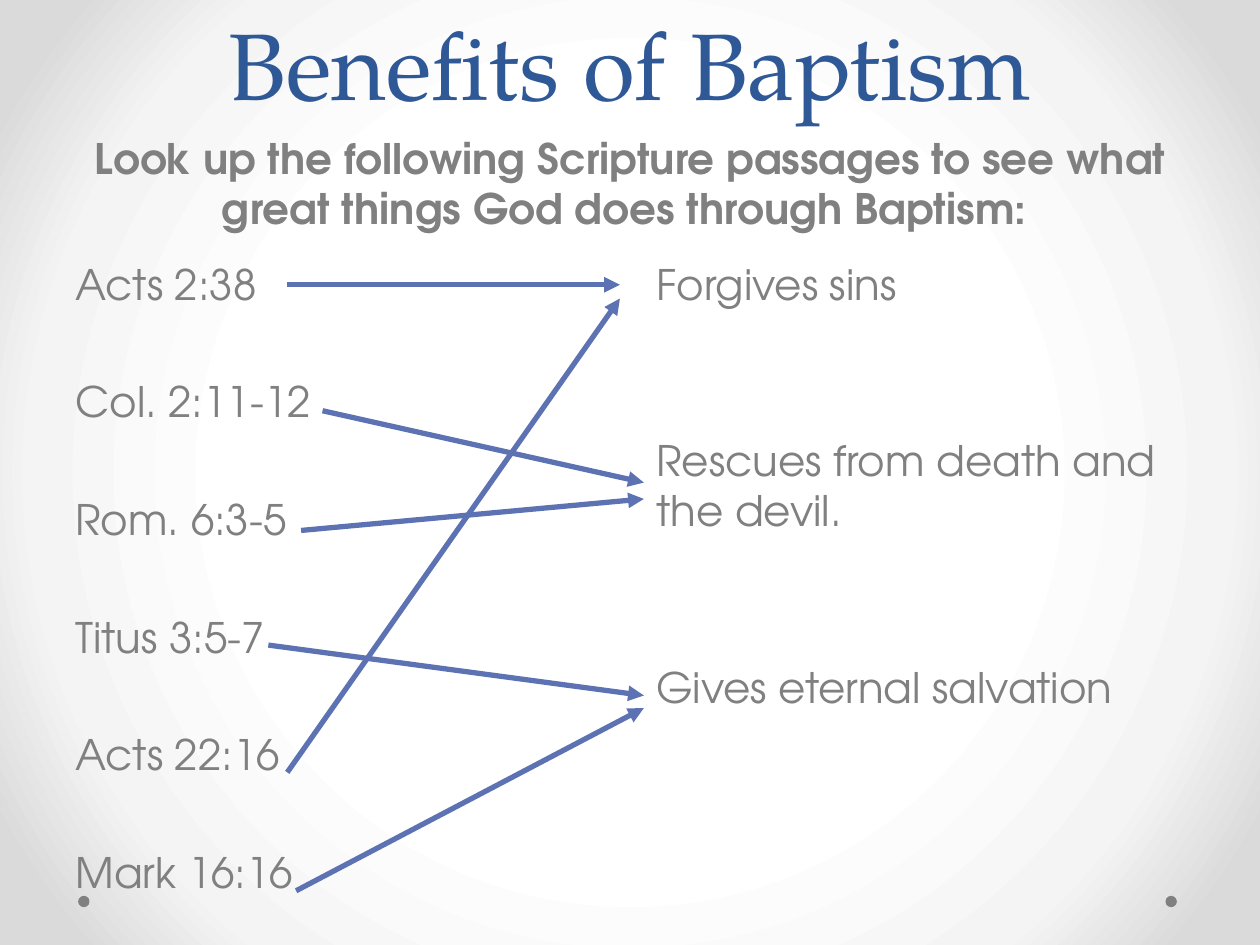
from pptx import Presentation
from pptx.dml.color import RGBColor
from pptx.enum.shapes import MSO_CONNECTOR, MSO_SHAPE
from pptx.enum.text import MSO_ANCHOR, PP_ALIGN
from pptx.oxml import parse_xml
from pptx.oxml.ns import nsdecls
from pptx.util import Inches, Pt
from lxml import etree

STRAIGHT, OVAL = MSO_CONNECTOR.STRAIGHT, MSO_SHAPE.OVAL
CENTER, LEFT = PP_ALIGN.CENTER, PP_ALIGN.LEFT
TOP, BOTTOM = MSO_ANCHOR.TOP, MSO_ANCHOR.BOTTOM
DRAWING = "{http://schemas.openxmlformats.org/drawingml/2006/main}"
HEADING_FONT, BODY_FONT = "TeX Gyre Pagella", "TeX Gyre Adventor"
BLUE, GRAY, ARROW_BLUE = "2F5897", "808080", "5C72B2"
MARGIN, ROW, COLUMN, RIGHT_COLUMN = 0.5, 1, 4.42, 5.11


def color(value):
    return RGBColor.from_string(value)


def fill_text(shape, box, lines, font, size, text_color, bold=False,
              align=LEFT, anchor=TOP, gap=0):
    """Place the shape and write one paragraph per line, gap points apart."""
    shape.left, shape.top, shape.width, shape.height = map(Inches, box)
    frame = shape.text_frame
    frame.word_wrap = True
    frame.vertical_anchor = anchor
    frame.text = "\n".join(lines)
    for index, paragraph in enumerate(frame.paragraphs):
        paragraph.alignment = align
        paragraph.space_before = Pt(gap if index else 0)
        run_font = paragraph.runs[0].font
        run_font.name, run_font.size, run_font.bold = font, Pt(size), bold
        run_font.color.rgb = color(text_color)


presentation = Presentation()
presentation.slide_width = Inches(10)
presentation.slide_height = Inches(7.5)
slide = presentation.slides.add_slide(presentation.slide_layouts[5])

# Radial background, white in the middle
stops = "".join(
    f'<a:gs pos="{share * 1000}"><a:srgbClr val="{value}"/></a:gs>'
    for share, value in [(50, "FFFFFF"), (76, "F4F4F4"), (92, "DADADA")])
slide.element.cSld.insert(0, parse_xml(
    f'<p:bg {nsdecls("p", "a")}><p:bgPr><a:gradFill rotWithShape="1">'
    f'<a:gsLst>{stops}</a:gsLst><a:path path="circle">'
    '<a:fillToRect l="50000" t="50000" r="50000" b="50000"/></a:path>'
    '</a:gradFill><a:effectLst/></p:bgPr></p:bg>'))

# Corner dots
for left in (9.25, 0.62):
    dot = slide.shapes.add_shape(OVAL, Inches(left), Inches(7.11), Inches(0.09), Inches(0.09))
    dot.shadow.inherit = False
    dot.fill.solid()
    dot.fill.fore_color.rgb = color(GRAY)
    dot.line.fill.background()

# Title and instruction
title = slide.shapes.title
fill_text(title, (MARGIN, 0, 9, ROW), ["Benefits of Baptism"],
          HEADING_FONT, 54, BLUE, align=CENTER, anchor=BOTTOM)
title.text_frame.paragraphs[0].line_spacing = Pt(58)

instruction = slide.shapes.add_textbox(0, 0, 0, 0)
fill_text(instruction, (MARGIN, ROW, 9, ROW),
          ["Look up the following Scripture passages to see what great things "
           "God does through Baptism: "],
          BODY_FONT, 24, GRAY, bold=True, align=CENTER)

# Passages on the left, benefits on the right
passages = ["Acts 2:38", "Col. 2:11-12", "Rom. 6:3-5", "Titus 3:5-7", "Acts 22:16", "Mark 16:16"]
benefits = ["Forgives sins", "Rescues from death and the devil.", "Gives eternal salvation"]
for left, lines, gap in [(MARGIN, passages, 38.4), (RIGHT_COLUMN, benefits, 72)]:
    column = slide.shapes.add_textbox(0, 0, 0, 0)
    fill_text(column, (left, 2 * ROW, COLUMN, 5.5), lines, BODY_FONT, 24, GRAY, gap=gap)

# Arrows from each passage to its benefit
arrows = [
    (2.28, 2.26, 4.92, 2.26),
    (2.56, 3.26, RIGHT_COLUMN, 3.83),
    (2.39, 4.21, RIGHT_COLUMN, 3.96),
    (2.28, 6.13, 4.92, 2.37),
    (2.13, 5.12, RIGHT_COLUMN, 5.52),
    (2.35, 7.07, RIGHT_COLUMN, 5.62),
]
for ends in arrows:
    arrow = slide.shapes.add_connector(STRAIGHT, *map(Inches, ends))
    arrow.line.color.rgb = color(ARROW_BLUE)
    arrow.line.width = Pt(3)
    etree.SubElement(arrow.line._get_or_add_ln(), DRAWING + "tailEnd", type="triangle")
    etree.SubElement(arrow.element.spPr, DRAWING + "effectLst")

presentation.save("out.pptx")
